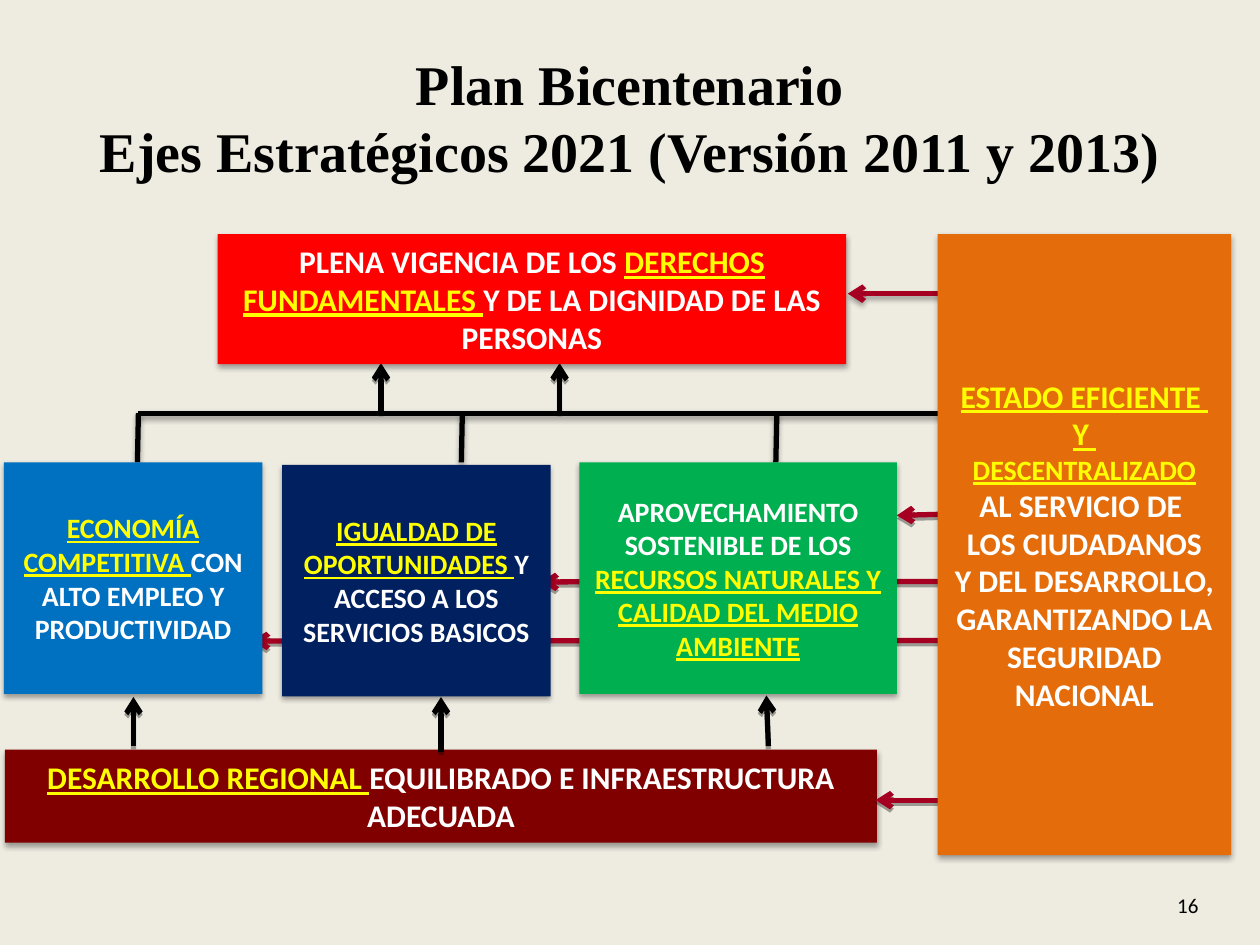
"""Build the Plan Bicentenario slide of strategic axes."""
from dataclasses import dataclass

import lxml.etree
import pptx
import pptx.dml.color
import pptx.enum.shapes
import pptx.enum.text
import pptx.oxml.ns
import pptx.util

Cm = pptx.util.Cm
ALIGN = pptx.enum.text.PP_ALIGN
BLACK, WHITE, YELLOW, CRIMSON = "000000", "FFFFFF", "FFFF00", "A50021"


@dataclass
class Box:
    x: float
    y: float
    w: float
    h: float
    fill: str
    lines: list[tuple[str, int]]
    inset: float = 0.25


@dataclass
class Line:
    x1: float
    y1: float
    x2: float
    y2: float
    color: str = BLACK
    arrow: bool = True
    blur: float = 0


BACK_LINES = [
    Line(22.35, 12.91, 5.08, 12.92, CRIMSON),
    Line(20.22, 11.72, 10.9, 11.73, CRIMSON),
    Line(2.79, 8.33, 19.48, 8.33, arrow=False, blur=3.1),
    *[Line(x, 8.33, x - 0.02, 9.32, arrow=False, blur=3.1) for x in (2.79, 9.32, 15.66)],
    *[Line(x, 8.33, x, 7.32) for x in (7.68, 11.28)],
    Line(2.69, 15.04, 2.69, 14.05),
]
BOXES = [
    Box(4.39, 4.72, 12.67, 2.62, "FF0000",
        [("PLENA VIGENCIA DE LOS *DERECHOS FUNDAMENTALES *Y DE LA DIGNIDAD DE LAS PERSONAS", 18)]),
    Box(5.69, 9.37, 5.41, 4.67, "002060",
        [("*IGUALDAD DE OPORTUNIDADES *Y ACCESO A LOS SERVICIOS BASICOS", 16)], 0.1),
    Box(0.08, 9.32, 5.21, 4.67, "0070C0",
        [("*ECONOMÍA COMPETITIVA *CON ALTO EMPLEO Y PRODUCTIVIDAD", 16)]),
    Box(11.68, 9.32, 6.4, 4.67, "00B050",
        [("APROVECHAMIENTO SOSTENIBLE DE LOS "
          "*RECURSOS NATURALES Y CALIDAD DEL MEDIO AMBIENTE*", 16)], 0.1),
    Box(0.1, 15.11, 17.58, 1.88, "800000",
        [("*DESARROLLO REGIONAL *EQUILIBRADO E INFRAESTRUCTURA ADECUADA", 18)]),
]
FRONT_LINES = [
    Line(22.05, 5.92, 17.09, 5.92, CRIMSON, blur=3.1),
    Line(19.89, 16.13, 17.65, 16.13, CRIMSON),
    Line(19.23, 10.36, 18.08, 10.39, CRIMSON),
    Line(8.89, 15.16, 8.89, 14.05),
    Line(15.49, 15.04, 15.45, 14.02),
]
STATE = Box(18.9, 4.72, 5.92, 12.52, "E46C0A", [
    ("*ESTADO EFICIENTE *", 18),
    ("*Y *", 18),
    ("*DESCENTRALIZADO*", 16),
    ("AL SERVICIO DE ", 18),
    ("LOS CIUDADANOS", 18),
    ("Y DEL DESARROLLO, GARANTIZANDO LA SEGURIDAD NACIONAL", 18),
], 0.1)


def rgb(value: str) -> pptx.dml.color.RGBColor:
    return pptx.dml.color.RGBColor.from_string(value)


def set_attrs(obj, values: dict) -> None:
    for name, value in values.items():
        setattr(obj, name, value)


def add_run(p, text: str, color: str, size: int, **font) -> None:
    r = p.add_run()
    r.text = text
    set_attrs(r.font, {"name": "Calibri", "size": pptx.util.Pt(size), **font})
    r.font.color.rgb = rgb(color)


def add_shadow(sp, blur: float) -> None:
    sp.shadow.inherit = False
    effects = sp._element.spPr.find(pptx.oxml.ns.qn("a:effectLst"))
    shadow = lxml.etree.SubElement(
        effects, pptx.oxml.ns.qn("a:outerShdw"), blurRad=str(pptx.util.Pt(blur)),
        dist=str(pptx.util.Pt(1.8)), dir="5400000", rotWithShape="0")
    color = lxml.etree.SubElement(shadow, pptx.oxml.ns.qn("a:srgbClr"), val=BLACK)
    lxml.etree.SubElement(color, pptx.oxml.ns.qn("a:alpha"), val="35000")


def add_line(s, line: Line) -> None:
    sp = s.shapes.add_connector(
        pptx.enum.shapes.MSO_CONNECTOR.STRAIGHT,
        Cm(line.x1), Cm(line.y1), Cm(line.x2), Cm(line.y2))
    sp.line.width = pptx.util.Pt(3)
    sp.line.color.rgb = rgb(line.color)
    if line.arrow:
        ln = sp.line._get_or_add_ln()
        lxml.etree.SubElement(ln, pptx.oxml.ns.qn("a:tailEnd"), type="arrow")
    lxml.etree.SubElement(sp._element.spPr, pptx.oxml.ns.qn("a:effectLst"))
    add_shadow(sp, line.blur)


def add_box(s, box: Box) -> None:
    sp = s.shapes.add_shape(
        pptx.enum.shapes.MSO_SHAPE.RECTANGLE, Cm(box.x), Cm(box.y), Cm(box.w), Cm(box.h))
    sp.fill.solid()
    sp.fill.fore_color.rgb = rgb(box.fill)
    sp.line.fill.background()
    add_shadow(sp, 3.1)
    tf = sp.text_frame
    set_attrs(tf, {"word_wrap": True, "margin_left": Cm(box.inset),
                   "margin_right": Cm(box.inset),
                   "vertical_anchor": pptx.enum.text.MSO_ANCHOR.MIDDLE})
    for i, (text, size) in enumerate(box.lines):
        p = tf.add_paragraph() if i else tf.paragraphs[0]
        p.alignment = ALIGN.CENTER
        for j, part in enumerate(text.split("*")):
            marked = j % 2 == 1
            if part:
                add_run(p, part, YELLOW if marked else WHITE, size, bold=True, underline=marked)


def add_title(s) -> None:
    sp = s.shapes.title
    set_attrs(sp, {"left": Cm(1.27), "top": Cm(0.76), "width": Cm(22.86), "height": Cm(3.18)})
    tf = sp.text_frame
    set_attrs(tf, {"word_wrap": True, "vertical_anchor": pptx.enum.text.MSO_ANCHOR.MIDDLE})
    p = tf.paragraphs[0]
    p.alignment = ALIGN.CENTER
    font = {"name": "Times New Roman", "bold": True}
    add_run(p, "Plan Bicentenario", BLACK, 32, **font)
    p.add_line_break()
    add_run(p, "Ejes Estratégicos 2021 (Versión 2011 y 2013)", BLACK, 32, **font)


def add_page_number(s) -> None:
    tf = s.shapes.add_textbox(Cm(18.49), Cm(17.73), Cm(5.92), Cm(1.02)).text_frame
    set_attrs(tf, {"word_wrap": True, "vertical_anchor": pptx.enum.text.MSO_ANCHOR.MIDDLE})
    p = tf.paragraphs[0]
    p.alignment = ALIGN.RIGHT
    add_run(p, "16", BLACK, 12)


def main() -> None:
    prs = pptx.Presentation()
    set_attrs(prs, {"slide_width": Cm(25.4), "slide_height": Cm(19.05)})
    s = prs.slides.add_slide(prs.slide_layouts[5])
    s.background.fill.solid()
    s.background.fill.fore_color.rgb = rgb("EEECE1")
    add_title(s)
    for line in BACK_LINES:
        add_line(s, line)
    for box in BOXES:
        add_box(s, box)
    for line in FRONT_LINES:
        add_line(s, line)
    add_box(s, STATE)
    add_page_number(s)
    prs.save("out.pptx")


if __name__ == "__main__":
    main()
